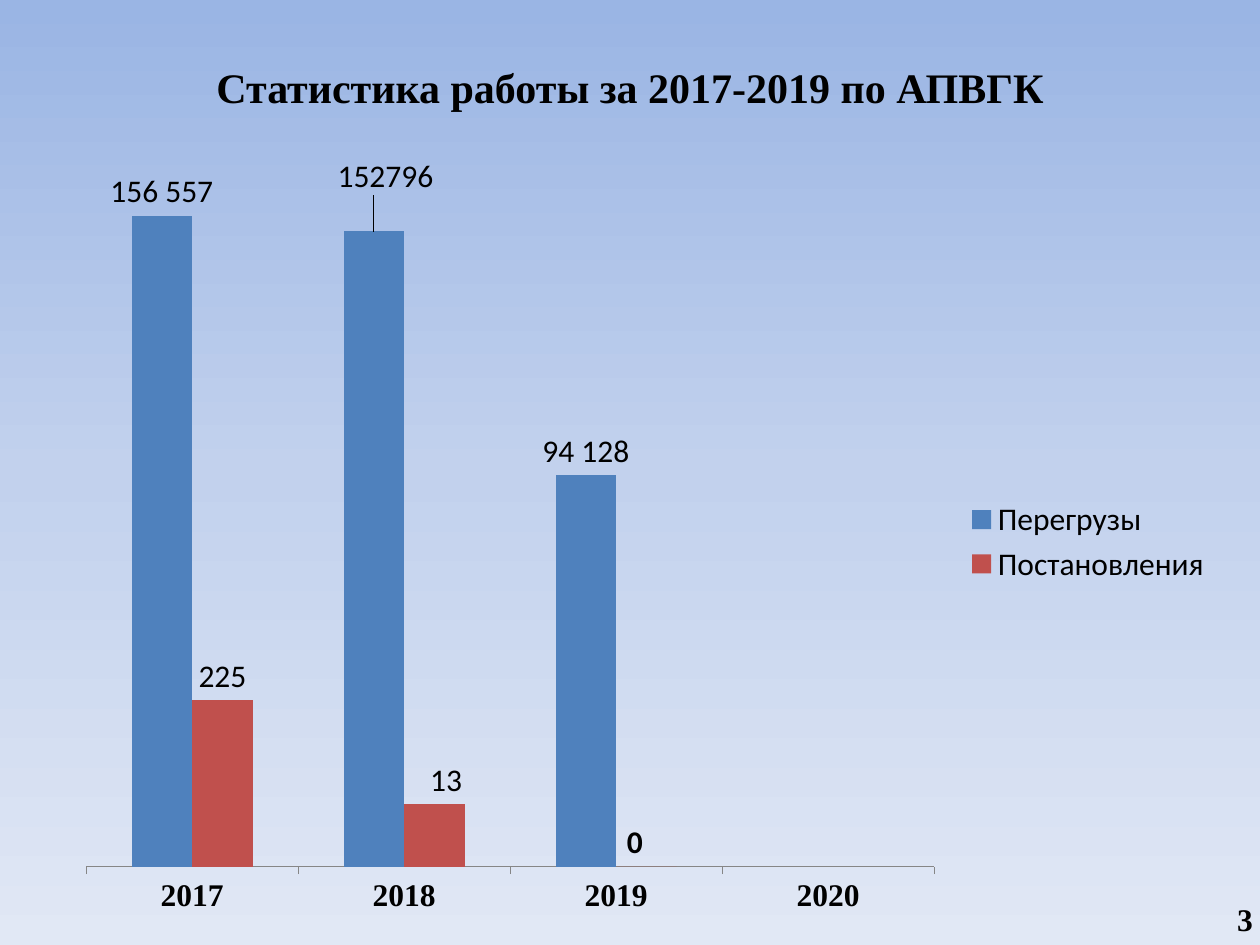
"""Build a slide with a clustered column chart of yearly overload statistics."""
from copy import deepcopy

from lxml.etree import SubElement
from pptx import Presentation
from pptx.chart.data import CategoryChartData
from pptx.dml.color import RGBColor
from pptx.enum.chart import (XL_CHART_TYPE, XL_LABEL_POSITION, XL_LEGEND_POSITION,
                             XL_TICK_LABEL_POSITION, XL_TICK_MARK)
from pptx.enum.text import MSO_ANCHOR, PP_ALIGN
from pptx.oxml.ns import qn
from pptx.util import Inches, Pt

SERIF = "Times New Roman"
SANS = "Calibri"
STOPS = [(0, "9AB5E4"), (0.5, "C2D1ED"), (1, "E1E8F5")]
TITLE = "Статистика работы за 2017-2019 по АПВГК"
PAGE = "3"
YEARS = ["2017", "2018", "2019", "2020"]
SERIES = [
    ("Перегрузы", [156557, 152796, 94128, None], "4F81BD", ["156 557", "152796", "94 128"]),
    ("Постановления", [40000, 15000, 0, None], "C0504D", ["225", "13", None]),
]
SHIFTS = {(0, 1): (0.01, -0.04), (1, 1): (0.01, 0), (1, 2): (-0.01, 0)}
PLOT = {"x": 0.02, "y": 0.06, "w": 0.73, "h": 0.86}


def color(code):
    return RGBColor.from_string(code)


def style(font, size, name, bold=False):
    font.size, font.name, font.bold = Pt(size), name, bold
    font.color.rgb = color("000000")


def add_text(slide, box, text, size):
    frame = slide.shapes.add_textbox(*map(Inches, box)).text_frame
    frame.text = text
    style(frame.paragraphs[0].runs[0].font, size, SERIF, True)
    return frame


def fill_back(slide):
    fill = slide.background.fill
    fill.gradient()
    fill.gradient_angle = 270
    first = fill.gradient_stops[0]._gs
    first.addnext(deepcopy(first))
    for stop, (place, code) in zip(fill.gradient_stops, STOPS):
        stop.position = place
        stop.color.rgb = color(code)


def place(layout, values):
    manual = SubElement(layout, qn("c:manualLayout"))
    for tag, value in values.items():
        SubElement(manual, qn(f"c:{tag}")).set("val", str(value))


def label_points(series, row, texts):
    labels = series.data_labels
    labels.show_value = True
    labels.position = XL_LABEL_POSITION.OUTSIDE_END
    style(labels.font, 18, SANS, True)
    for col, text in enumerate(texts):
        label = series.points[col].data_label
        if text:
            label.text_frame.text = text
            style(label.text_frame.paragraphs[0].runs[0].font, 18, SANS)
        else:
            style(label.font, 18, SANS, True)
        label.position = XL_LABEL_POSITION.OUTSIDE_END
        if (row, col) in SHIFTS:
            index = series._element.xpath(f'c:dLbls/c:dLbl/c:idx[@val="{col}"]')[0]
            layout = SubElement(index.getparent(), qn("c:layout"))
            index.addnext(layout)
            place(layout, dict(zip("xy", SHIFTS[row, col])))


def add_chart(slide):
    data = CategoryChartData()
    data.categories = YEARS
    for name, values, _, _ in SERIES:
        data.add_series(name, values)
    box = map(Inches, (0.5, 1.23, 9.22, 6.14))
    chart = slide.shapes.add_chart(XL_CHART_TYPE.COLUMN_CLUSTERED, *box, data).chart
    style(chart.font, 18, SANS)
    chart.has_title = False
    chart.has_legend = True
    chart.legend.position = XL_LEGEND_POSITION.RIGHT
    chart.legend.include_in_layout = False

    years, scale = chart.category_axis, chart.value_axis
    style(years.tick_labels.font, 18, SERIF, True)
    years.tick_label_position = XL_TICK_LABEL_POSITION.LOW
    years.major_tick_mark = XL_TICK_MARK.OUTSIDE
    years.format.line.color.rgb = color("868686")
    scale.minimum_scale, scale.maximum_scale = 0, 160000
    scale.major_unit = 50000
    scale.has_major_gridlines = False
    scale.visible = False

    plot = chart.plots[0]
    plot.gap_width, plot.overlap = 150, 0
    plot.vary_by_categories = False
    for row, (series, (_, _, code, texts)) in enumerate(zip(plot.series, SERIES)):
        series.format.fill.solid()
        series.format.fill.fore_color.rgb = color(code)
        label_points(series, row, texts)

    area = chart._chartSpace.chart.plotArea
    for old in area.findall(qn("c:layout")):
        area.remove(old)
    layout = SubElement(area, qn("c:layout"))
    area.insert(0, layout)
    place(layout, {"layoutTarget": "inner", "xMode": "edge", "yMode": "edge", **PLOT})


def main():
    deck = Presentation()
    deck.slide_width, deck.slide_height = Inches(10), Inches(7.5)
    slide = deck.slides.add_slide(deck.slide_layouts[6])
    fill_back(slide)
    title = add_text(slide, (0.5, 0.3, 9, 0.77), TITLE, 24)
    title.word_wrap = True
    title.vertical_anchor = MSO_ANCHOR.MIDDLE
    title.paragraphs[0].alignment = PP_ALIGN.CENTER
    add_chart(slide)
    add_text(slide, (9.72, 7.09, 0.28, 0.4), PAGE, 18)
    deck.save("out.pptx")


if __name__ == "__main__":
    main()
